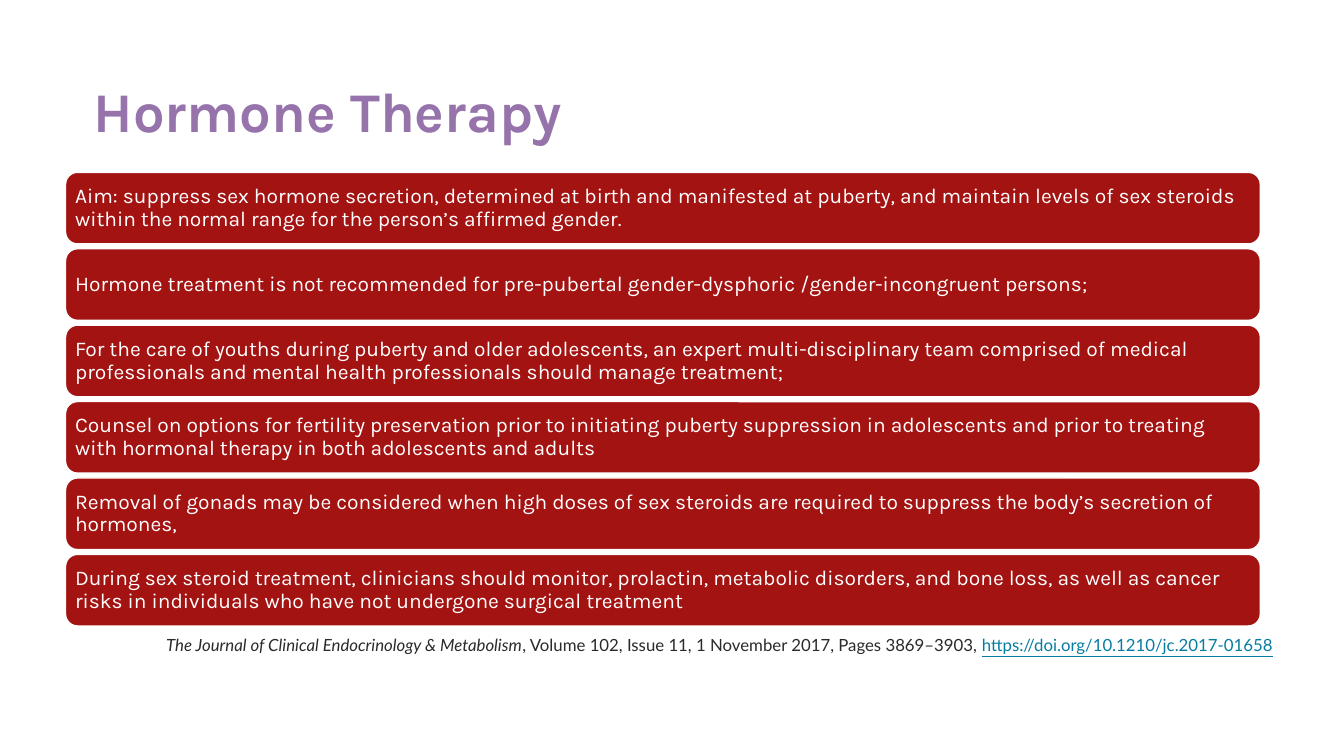
from pptx import Presentation
from pptx.dml.color import RGBColor
from pptx.enum.shapes import MSO_SHAPE as Shape
from pptx.enum.text import MSO_ANCHOR as Anchor, PP_ALIGN as Align
from pptx.util import Inches, Pt

POINTS = [
    "Aim: suppress sex hormone secretion, determined at birth and manifested at puberty, "
    "and maintain levels of sex steroids within the normal range for the person’s affirmed gender.",
    "Hormone treatment is not recommended for pre-pubertal gender-dysphoric "
    "/gender-incongruent persons;",
    "For the care of youths during puberty and older adolescents, an expert multi-disciplinary "
    "team comprised of medical professionals and mental health professionals should manage treatment;",
    "Counsel on options for fertility preservation prior to initiating puberty suppression in "
    "adolescents and prior to treating with hormonal therapy in both adolescents and adults",
    "Removal of gonads may be considered when high doses of sex steroids are required to "
    "suppress the body’s secretion of hormones,",
    "During sex steroid treatment, clinicians should monitor, prolactin, metabolic disorders, "
    "and bone loss, as well as cancer risks in individuals who have not undergone surgical treatment",
]
CITATION = [
    ("The Journal of Clinical Endocrinology & Metabolism", "2A2A2A", {"italic": True}),
    (", Volume 102, Issue 11, 1 November 2017, Pages 3869–3903, ", "2A2A2A", {}),
    ("https://doi.org/10.1210/jc.2017-01658", "067CA2", {"underline": True}),
]
BAR_TOP, BAR_BOTTOM, BAR_HEIGHT = 1.71, 6.21, 0.71
BAR_PITCH = (BAR_BOTTOM - BAR_HEIGHT - BAR_TOP) / (len(POINTS) - 1)


def color(hex_code):
    return RGBColor.from_string(hex_code)


def apply(target, values):
    for name, value in values.items():
        setattr(target, name, value)


class TherapySlide:
    heading = {"name": "Karla", "size": Pt(40), "bold": True}
    body = {"name": "Karla", "size": Pt(15)}
    source = {"name": "Lato", "size": Pt(12)}
    tight = {"alignment": Align.LEFT, "line_spacing": 0.9, "space_before": Pt(0)}

    def __init__(self, deck):
        self.slide = deck.slides.add_slide(deck.slide_layouts[5])

    def add_words(self, paragraph, text, hex_code, font):
        run = paragraph.add_run()
        run.text = text
        apply(run.font, font)
        run.font.color.rgb = color(hex_code)

    def title(self, text, left, top, width, height):
        title = self.slide.shapes.title
        apply(title, {"left": Inches(left), "top": Inches(top),
                      "width": Inches(width), "height": Inches(height)})
        apply(title.text_frame, {"vertical_anchor": Anchor.MIDDLE, "word_wrap": True})
        paragraph = title.text_frame.paragraphs[0]
        apply(paragraph, self.tight)
        self.add_words(paragraph, text, "9674AB", self.heading)

    def bar(self, text, left, top, width, height):
        bar = self.slide.shapes.add_shape(
            Shape.ROUNDED_RECTANGLE, Inches(left), Inches(top), Inches(width), Inches(height))
        bar.shadow.inherit = False
        bar.fill.solid()
        bar.fill.fore_color.rgb = color("A31312")
        bar.line.color.rgb = color("FFFFFF")
        bar.line.width = Pt(1)
        apply(bar.text_frame, {
            "vertical_anchor": Anchor.MIDDLE, "word_wrap": True,
            "margin_left": Inches(0.06), "margin_right": Inches(0.06),
            "margin_top": Inches(0.06), "margin_bottom": Inches(0.06)})
        paragraph = bar.text_frame.paragraphs[0]
        apply(paragraph, self.tight)
        self.add_words(paragraph, text, "FFFFFF", self.body)

    def citation(self, parts, left, top, width, height):
        box = self.slide.shapes.add_textbox(
            Inches(left), Inches(top), Inches(width), Inches(height))
        box.text_frame.word_wrap = True
        for text, hex_code, emphasis in parts:
            self.add_words(box.text_frame.paragraphs[0], text, hex_code, self.source | emphasis)


def main():
    deck = Presentation()
    apply(deck, {"slide_width": Inches(13.33), "slide_height": Inches(7.5)})
    page = TherapySlide(deck)
    page.title("Hormone Therapy", 0.83, 0.78, 11.58, 0.71)
    for row, point in enumerate(POINTS):
        page.bar(point, 0.65, BAR_TOP + row * BAR_PITCH, 11.85, BAR_HEIGHT)
    page.citation(CITATION, 1.55, 6.25, 11.49, 0.3)
    deck.save("out.pptx")


if __name__ == "__main__":
    main()
